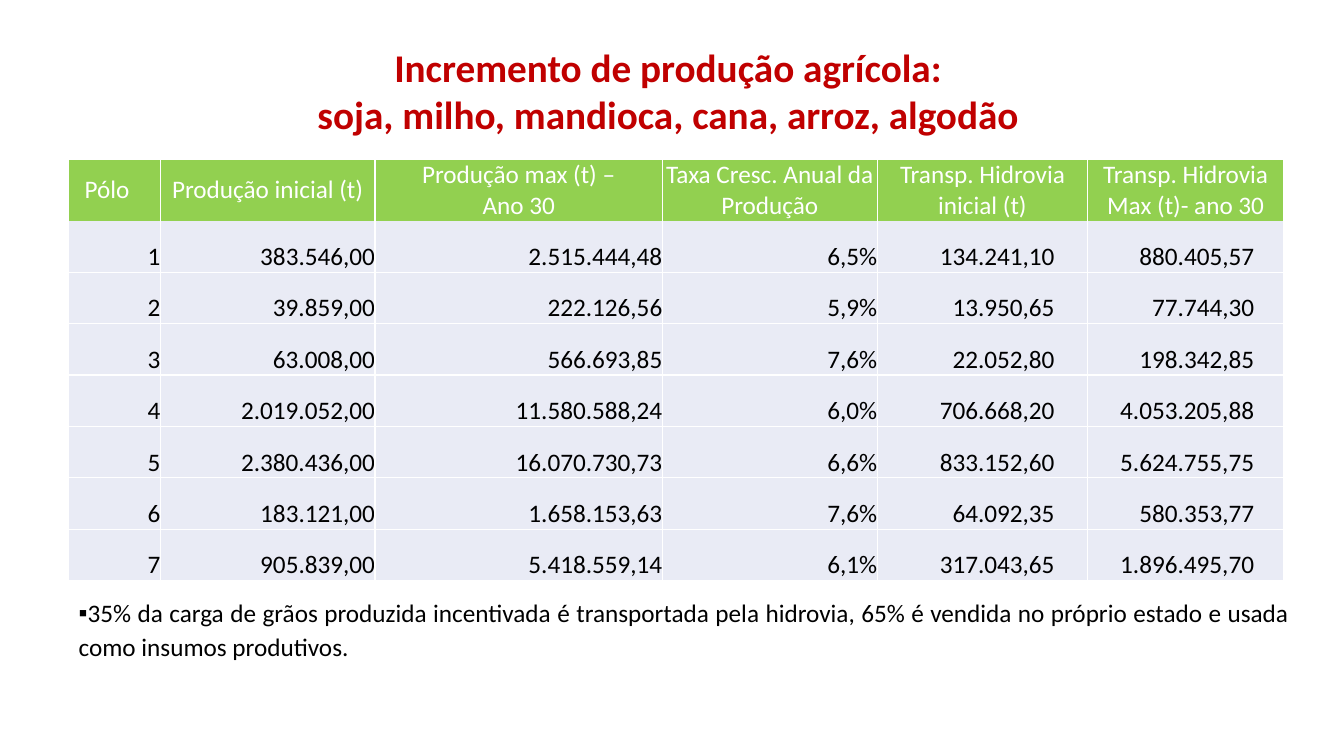
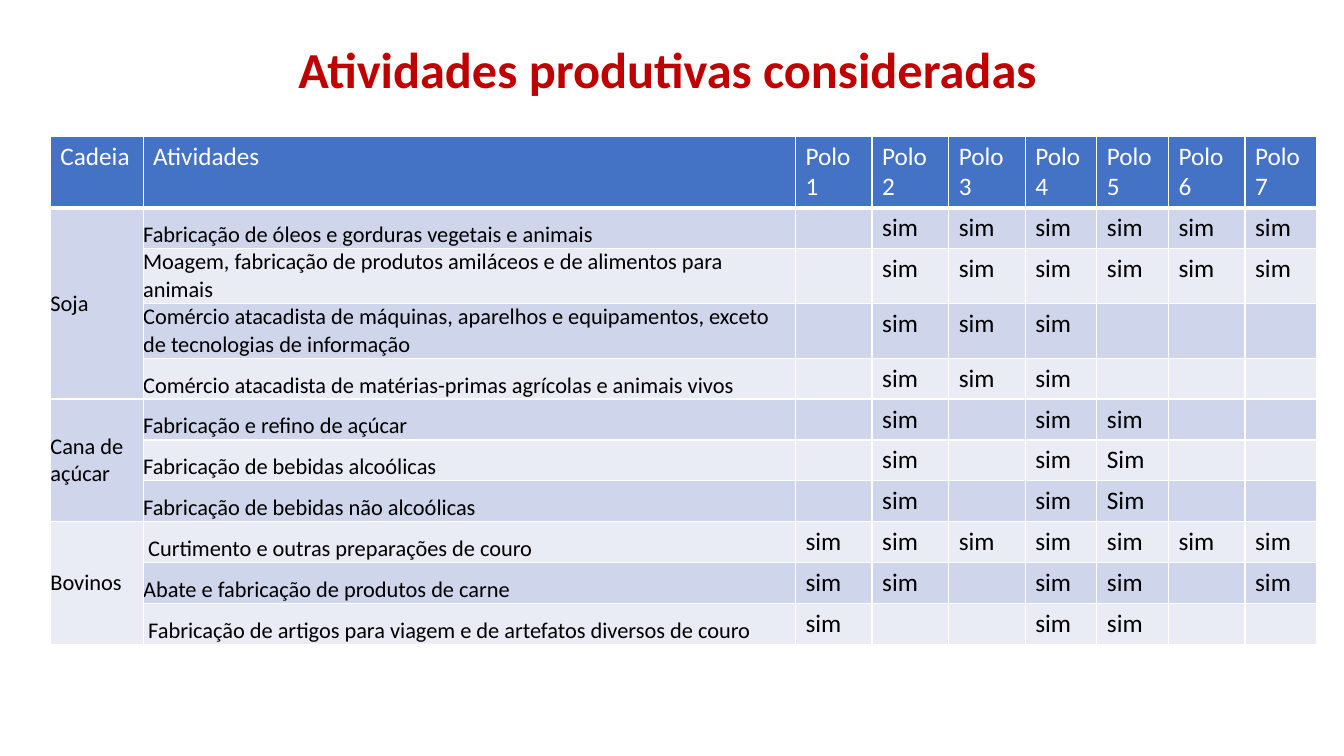
from dataclasses import dataclass

from lxml.etree import SubElement
from pptx import Presentation
from pptx.dml.color import RGBColor
from pptx.enum.text import MSO_ANCHOR, MSO_AUTO_SIZE, PP_ALIGN
from pptx.oxml.ns import qn
from pptx.util import Emu, Pt

EMU_PER_PX = 9144  # 100 px to the inch
SLIDE_SIZE = (1333, 750)


@dataclass(frozen=True)
class Theme:
    font: str = "Calibri"
    title: str = "C00000"
    text: str = "000000"
    inverse: str = "FFFFFF"
    border: str = "FFFFFF"
    green: str = "92D050"
    blue: str = "4472C4"
    light: str = "E9EBF5"
    dark: str = "CFD5EA"
    title_size: int = 36
    long_title_size: int = 28
    body_size: int = 18
    small_size: int = 16


THEME = Theme()


def px(length):
    return Emu(length * EMU_PER_PX)


def write_text(frame, text, size=THEME.body_size, color=THEME.text, bold=False,
               align=PP_ALIGN.LEFT, line_spacing=1.0, bullet=None):
    """Write each line of text as one formatted paragraph."""
    for index, line in enumerate(text.split("\n")):
        paragraph = frame.add_paragraph() if index else frame.paragraphs[0]
        paragraph.alignment = align
        paragraph.line_spacing = line_spacing
        paragraph.space_before = Pt(0)
        if bullet:
            properties = paragraph._p.get_or_add_pPr()
            properties.set("marL", "0")
            properties.set("indent", "0")
            SubElement(properties, qn("a:buChar"), char=bullet)
        run = paragraph.add_run()
        run.text = line
        run.font.name = THEME.font
        run.font.size = Pt(size)
        run.font.bold = bold
        run.font.color.rgb = RGBColor.from_string(color)


def set_borders(cell, top, bottom):
    """Draw the cell borders; widths are points and 0 means no line."""
    properties = cell._tc.get_or_add_tcPr()
    for side, width in (("L", 1), ("R", 1), ("T", top), ("B", bottom)):
        line = SubElement(properties, qn(f"a:ln{side}"), w=str(Pt(width)))
        if width:
            fill = SubElement(line, qn("a:solidFill"))
            SubElement(fill, qn("a:srgbClr"), val=THEME.border)
        else:
            SubElement(line, qn("a:noFill"))


class Deck:
    def __init__(self):
        self.presentation = Presentation()
        self.presentation.slide_width, self.presentation.slide_height = map(px, SLIDE_SIZE)
        self.slide = None

    def add_slide(self, layout):
        self.slide = self.presentation.slides.add_slide(
            self.presentation.slide_layouts.get_by_name(layout))

    def fill_placeholder(self, shape, box, text, **text_format):
        shape.left, shape.top, shape.width, shape.height = map(px, box)
        frame = shape.text_frame
        frame.word_wrap = True
        frame.auto_size = MSO_AUTO_SIZE.NONE
        frame.vertical_anchor = MSO_ANCHOR.TOP
        write_text(frame, text, **text_format)

    def title(self, box, text, **text_format):
        self.fill_placeholder(self.slide.shapes.title, box, text,
                              color=THEME.title, bold=True, **text_format)

    def body(self, box, text, **text_format):
        self.fill_placeholder(self.slide.placeholders[1], box, text, **text_format)

    def table(self, left, top, widths, heights, rows, style, header_rule):
        """Build a table; style(row, column) gives fill, insets, anchor and text format."""
        table = self.slide.shapes.add_table(
            len(rows), len(widths), px(left), px(top),
            px(sum(widths)), px(sum(heights))).table
        table.horz_banding = False
        for column, width in zip(table.columns, widths):
            column.width = px(width)
        for row, height in zip(table.rows, heights):
            row.height = px(height)
        for row_index, texts in enumerate(rows):
            for column_index, text in enumerate(texts):
                cell = table.cell(row_index, column_index)
                fill, insets, anchor, text_format = style(row_index, column_index)
                set_borders(cell, top=header_rule if row_index == 1 else 1,
                            bottom=header_rule if row_index == 0 else 1)
                cell.fill.solid()
                cell.fill.fore_color.rgb = RGBColor.from_string(fill)
                (cell.margin_left, cell.margin_top,
                 cell.margin_right, cell.margin_bottom) = map(px, insets)
                cell.vertical_anchor = anchor
                if text:
                    write_text(cell.text_frame, text, **text_format)
        return table


# Crop production
PRODUCTION_ROWS = [
    ("Pólo", "Produção inicial (t)", "Produção max (t) –\nAno 30",
     "Taxa Cresc. Anual da Produção", "Transp. Hidrovia inicial (t)",
     "Transp. Hidrovia Max (t)- ano 30"),
    ("1", "383.546,00", "2.515.444,48", "6,5%", "134.241,10", "880.405,57"),
    ("2", "39.859,00", "222.126,56", "5,9%", "13.950,65", "77.744,30"),
    ("3", "63.008,00", "566.693,85", "7,6%", "22.052,80", "198.342,85"),
    ("4", "2.019.052,00", "11.580.588,24", "6,0%", "706.668,20", "4.053.205,88"),
    ("5", "2.380.436,00", "16.070.730,73", "6,6%", "833.152,60", "5.624.755,75"),
    ("6", "183.121,00", "1.658.153,63", "7,6%", "64.092,35", "580.353,77"),
    ("7", "905.839,00", "5.418.559,14", "6,1%", "317.043,65", "1.896.495,70"),
]
WATERWAY_INSETS = {4: 33, 5: 29}


def production_style(row, column):
    if row == 0:
        first = column == 0
        align = PP_ALIGN.LEFT if first else PP_ALIGN.CENTER
        return (THEME.green, (16 if first else 0, 0, 0, 0), MSO_ANCHOR.MIDDLE,
                {"color": THEME.inverse, "align": align})
    return (THEME.light, (0, 0, WATERWAY_INSETS.get(column, 0), 0),
            MSO_ANCHOR.BOTTOM, {"align": PP_ALIGN.RIGHT})


def add_production_slide(deck):
    deck.add_slide("Title and Content")
    deck.title((52, 38, 1221, 104),
               "Incremento de produção agrícola:\n"
               "soja, milho, mandioca, cana, arroz, algodão",
               size=THEME.long_title_size, align=PP_ALIGN.CENTER)
    deck.table(68, 158, [91, 213, 285, 213, 209, 194], [60] + [51] * 7,
               PRODUCTION_ROWS, production_style, header_rule=0)
    deck.body((68, 585, 1221, 75),
              "35% da carga de grãos produzida incentivada é transportada pela "
              "hidrovia, 65% é vendida no próprio estado e usada como insumos "
              "produtivos.",
              align=PP_ALIGN.JUSTIFY, line_spacing=1.1, bullet="▪")


# Productive activities: one mark for each of the seven poles
MARKS = {"-": "", "s": "sim", "S": "Sim"}
CHAINS = {
    "Soja": [
        ("Fabricação de óleos e gorduras vegetais e animais", "-ssssss"),
        ("Moagem, fabricação de produtos amiláceos e de alimentos para animais", "-ssssss"),
        ("Comércio atacadista de máquinas, aparelhos e equipamentos, exceto "
         "de tecnologias de informação", "-sss---"),
        ("Comércio atacadista de matérias-primas agrícolas e animais vivos", "-sss---"),
    ],
    "Cana de açúcar": [
        ("Fabricação e refino de açúcar", "-s-ss--"),
        ("Fabricação de bebidas alcoólicas", "-s-sS--"),
        ("Fabricação de bebidas não alcoólicas", "-s-sS--"),
    ],
    "Bovinos": [
        ("Curtimento e outras preparações de couro", "sssssss"),
        ("Abate e fabricação de produtos de carne", "ss-ss-s"),
        ("Fabricação de artigos para viagem e de artefatos diversos de couro", "s--ss--"),
    ],
}
INDENTED_ROWS = (8, 10)
TALL_ROWS = (2, 3)


def activity_style(row, column):
    padded = (10, 5, 10, 5)
    if row == 0:
        return THEME.blue, padded, MSO_ANCHOR.TOP, {"color": THEME.inverse}
    fill = THEME.dark if row % 2 else THEME.light
    if column > 1:
        return fill, padded, MSO_ANCHOR.TOP, {}
    indent = 5 if column == 1 and row in INDENTED_ROWS else 0
    anchor = MSO_ANCHOR.BOTTOM if column else MSO_ANCHOR.MIDDLE
    return fill, (indent, 0, 0, 0), anchor, {"size": THEME.small_size}


def add_activities_slide(deck):
    deck.add_slide("Title Only")
    deck.title((286, 33, 806, 71), "Atividades produtivas consideradas",
               size=THEME.title_size)
    rows = [["Cadeia", "Atividades"] + [f"Polo {number}" for number in range(1, 8)]]
    spans = []
    for chain, activities in CHAINS.items():
        spans.append((len(rows), len(rows) + len(activities) - 1))
        for index, (activity, marks) in enumerate(activities):
            rows.append(["" if index else chain, activity]
                        + [MARKS[mark] for mark in marks])
    heights = [70] + [53 if row in TALL_ROWS else 40 for row in range(1, len(rows))]
    table = deck.table(50, 135, [92, 647, 76, 76, 76, 71, 71, 76, 71], heights,
                       rows, activity_style, header_rule=3)
    for first, last in spans:
        table.cell(first, 0).merge(table.cell(last, 0))


def main():
    deck = Deck()
    add_production_slide(deck)
    add_activities_slide(deck)
    deck.presentation.save("out.pptx")


if __name__ == "__main__":
    main()
